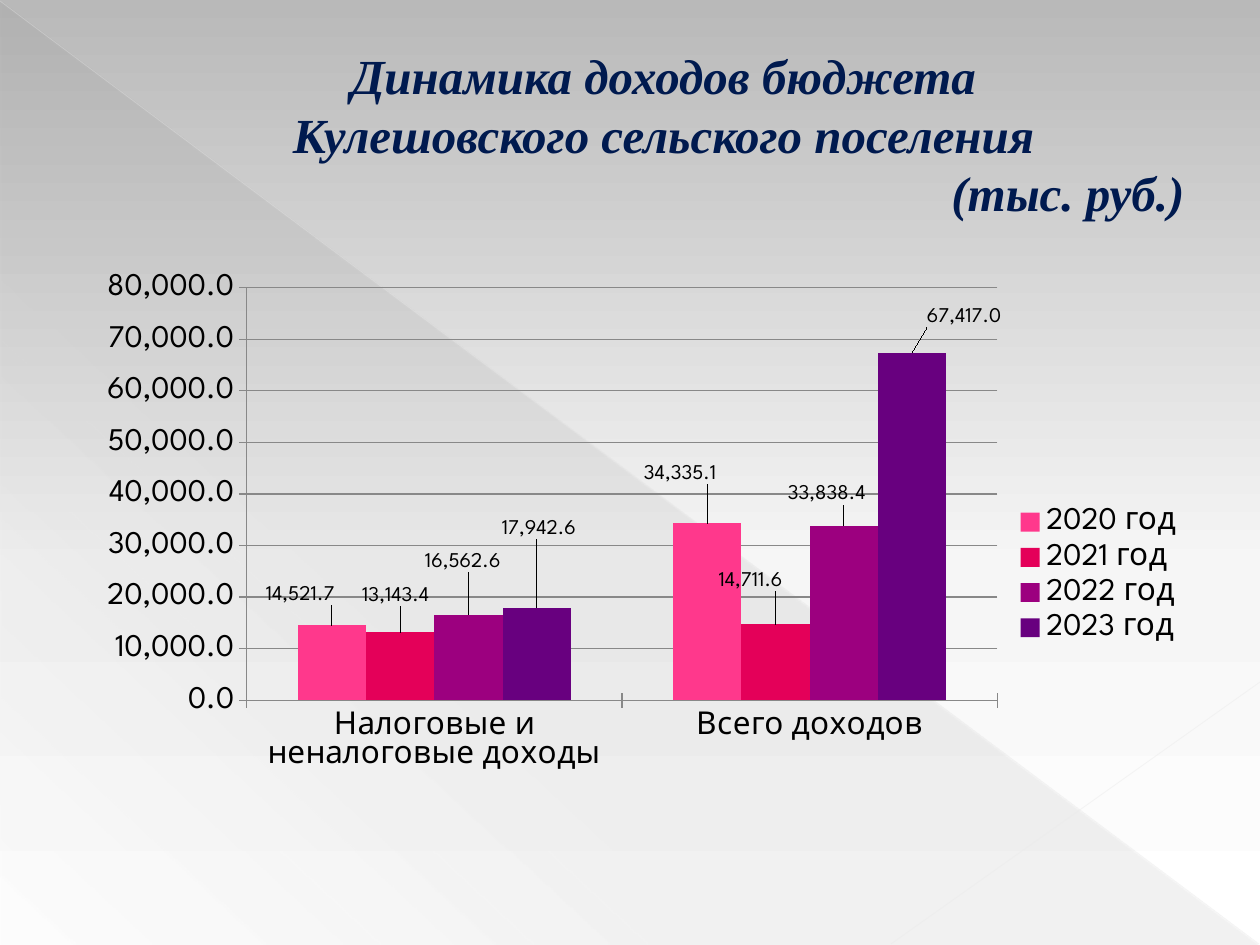
from lxml import etree
from pptx import Presentation
from pptx.chart.data import CategoryChartData
from pptx.dml.color import RGBColor
from pptx.enum.chart import XL_CHART_TYPE, XL_LABEL_POSITION, XL_LEGEND_POSITION, XL_TICK_MARK
from pptx.enum.shapes import MSO_CONNECTOR, MSO_SHAPE
from pptx.enum.text import MSO_ANCHOR, MSO_AUTO_SIZE, PP_ALIGN
from pptx.oxml import parse_xml
from pptx.oxml.ns import nsdecls, qn
from pptx.util import Pt

EMU_PER_PX = 914400 / 126
CENTER, RIGHT = PP_ALIGN.CENTER, PP_ALIGN.RIGHT
CLUSTERED = XL_CHART_TYPE.COLUMN_CLUSTERED
OUTSIDE_END = XL_LABEL_POSITION.OUTSIDE_END
TICK_CROSS = XL_TICK_MARK.CROSS
TITLE_FONT, CHART_FONT = "Times New Roman", "League Spartan"
NUMBER_FORMAT = "#,##0.0"

COLORS = {
    "title": "001A4F", "title_outline": "B12761", "text": "000000",
    "grid": "888888", "triangle": "666666",
    "long_line": "E8E8E8", "short_line": "EAEAEA",
    "2020 год": "FF388C", "2021 год": "E40059",
    "2022 год": "9C007F", "2023 год": "68007F",
}
# Gradient stops: position %, colour, opacity %
BACKGROUND_STOPS = [(0, "B9B9B9", 100), (60, "F6F6F6", 100), (100, "FFFFFF", 100)]
TRIANGLE_STOPS = [(0, COLORS["triangle"], 10), (70, COLORS["triangle"], 8),
                  (100, COLORS["triangle"], 1)]

TITLE_LINES = [
    ("Динамика доходов бюджета", CENTER),
    ("Кулешовского сельского поселения", CENTER),
    ("(тыс. руб.)", RIGHT),
]
CHART_BOX = (63, 260, 1134, 630)
CATEGORIES = ["Налоговые и неналоговые доходы", "Всего доходов"]
# Series: values, label shifts in px (one per category)
SERIES = {
    "2020 год": ((14521.7, 34335.1), ((-32, -15), (-27, -34))),
    "2021 год": ((13143.4, 14711.6), ((-4, -21), (-25, -28))),
    "2022 год": ((16562.6, 33838.4), ((-6, -37), (-17, -16))),
    "2023 год": ((17942.6, 67417.0), ((2, -63), (52, -20))),
}


def px(*lengths):
    return [round(length * EMU_PER_PX) for length in lengths]


def color(name):
    return RGBColor.from_string(COLORS[name])


def gradient(stops, angle):
    stop_xml = "".join(
        f'<a:gs pos="{position * 1000}"><a:srgbClr val="{hex_color}">'
        f'<a:alpha val="{opacity * 1000}"/></a:srgbClr></a:gs>'
        for position, hex_color, opacity in stops)
    return parse_xml(
        f'<a:gradFill {nsdecls("a")} rotWithShape="1"><a:gsLst>{stop_xml}</a:gsLst>'
        f'<a:lin ang="{angle * 60000}" scaled="0"/></a:gradFill>')


def replace_solid_fill(parent, new_fill):
    parent.replace(parent.find(qn("a:solidFill")), new_fill)


def set_background(slide):
    slide.background.fill.solid()
    properties = slide.background._cSld.find(qn("p:bg")).find(qn("p:bgPr"))
    replace_solid_fill(properties, gradient(BACKGROUND_STOPS, 90))


def add_triangle(slide):
    triangle = slide.shapes.add_shape(MSO_SHAPE.RIGHT_TRIANGLE, *px(1, 2, 1258, 943))
    triangle.shadow.inherit = False
    triangle.line.fill.background()
    triangle.fill.solid()
    replace_solid_fill(triangle._element.spPr, gradient(TRIANGLE_STOPS, 133))


def add_line(slide, ends, color_name, width, opacity):
    line = slide.shapes.add_connector(MSO_CONNECTOR.STRAIGHT, *px(*ends))
    line.line.width = Pt(width)
    line.line.color.rgb = color(color_name)
    properties = line._element.spPr
    hex_element = next(properties.iter(qn("a:srgbClr")))
    etree.SubElement(hex_element, qn("a:alpha")).set("val", str(opacity * 1000))
    etree.SubElement(properties, qn("a:effectLst"))


def format_title(slide):
    title = slide.shapes.title
    slide.shapes._spTree.append(title._element)  # in front of the decoration
    title.left, title.top, title.width, title.height = px(63, 37, 1134, 193)
    frame = title.text_frame
    frame.auto_size = MSO_AUTO_SIZE.NONE
    frame.word_wrap = True
    frame.vertical_anchor = MSO_ANCHOR.MIDDLE
    frame.text = "\n".join(text for text, _ in TITLE_LINES)
    for paragraph, (_, alignment) in zip(frame.paragraphs, TITLE_LINES):
        paragraph.alignment = alignment
        paragraph.line_spacing = 1.0
        paragraph.space_before = Pt(0)
        font = paragraph.font
        font.name, font.size = TITLE_FONT, Pt(28)
        font.bold = font.italic = True
        font.color.rgb = color("title")
        properties = paragraph._p.pPr
        properties.set("marL", str(px(67)[0]))
        properties.set("indent", "0")
        properties.find(qn("a:defRPr")).insert(0, parse_xml(
            f'<a:ln {nsdecls("a")} w="6350"><a:solidFill>'
            f'<a:srgbClr val="{COLORS["title_outline"]}"/></a:solidFill></a:ln>'))


def manual_layout(**settings):
    items = "".join(f'<c:{key} val="{value}"/>' for key, value in settings.items())
    return parse_xml(f'<c:layout {nsdecls("c")}><c:manualLayout>{items}'
                     '</c:manualLayout></c:layout>')


def format_axis(axis):
    axis.major_tick_mark = TICK_CROSS
    axis.format.line.color.rgb = color("grid")
    axis.tick_labels.font.size = Pt(18)


def format_series(series, shifts):
    series.format.fill.solid()
    series.format.fill.fore_color.rgb = color(series.name)
    series.invert_if_negative = False
    labels = series.data_labels
    labels.show_value = True
    labels.number_format = NUMBER_FORMAT
    labels.number_format_is_linked = False
    labels.font.size = Pt(12)
    for index, (shift_x, shift_y) in enumerate(shifts):
        label = series.points[index].data_label
        label.font.size = Pt(12)
        label.position = OUTSIDE_END
        element = labels._element.findall(qn("c:dLbl"))[index]
        element.insert(1, manual_layout(x=round(shift_x / CHART_BOX[2], 3),
                                        y=round(shift_y / CHART_BOX[3], 3)))


def add_income_chart(slide):
    data = CategoryChartData(number_format=NUMBER_FORMAT)
    data.categories = CATEGORIES
    for name, (values, _) in SERIES.items():
        data.add_series(name, values)
    chart = slide.shapes.add_chart(CLUSTERED, *px(*CHART_BOX), data).chart
    chart.has_title = False
    chart.font.name, chart.font.size = CHART_FONT, Pt(18)
    chart.font.color.rgb = color("text")

    plot = chart.plots[0]
    plot.vary_by_categories = False
    plot.gap_width, plot.overlap = 150, 0
    for series in plot.series:
        format_series(series, SERIES[series.name][1])

    format_axis(chart.category_axis)
    value_axis = chart.value_axis
    format_axis(value_axis)
    value_axis.minimum_scale, value_axis.maximum_scale = 0, 80000
    value_axis.major_unit = 10000
    value_axis.tick_labels.number_format = NUMBER_FORMAT
    value_axis.tick_labels.number_format_is_linked = False
    value_axis.major_gridlines.format.line.color.rgb = color("grid")

    chart.has_legend = True
    chart.legend.position = XL_LEGEND_POSITION.RIGHT
    chart.legend.include_in_layout = False
    chart.legend.font.size = Pt(18)

    plot_area = next(chart._chartSpace.iter(qn("c:plotArea")))
    for layout in plot_area.findall(qn("c:layout")):
        plot_area.remove(layout)
    plot_area.insert(0, manual_layout(layoutTarget="inner", xMode="edge", yMode="edge",
                                      x=0.162, y=0.044, w=0.662, h=0.655))


def main():
    presentation = Presentation()
    presentation.slide_width, presentation.slide_height = px(1260, 945)
    slide = presentation.slides.add_slide(presentation.slide_layouts[5])
    # Backdrop
    set_background(slide)
    add_triangle(slide)
    add_line(slide, (0, 1, 1259, 944), "long_line", 0.39, 35)
    add_line(slide, (1260, 682, 891, 944), "short_line", 0.47, 45)
    # Content
    format_title(slide)
    add_income_chart(slide)
    presentation.save("out.pptx")


if __name__ == "__main__":
    main()
